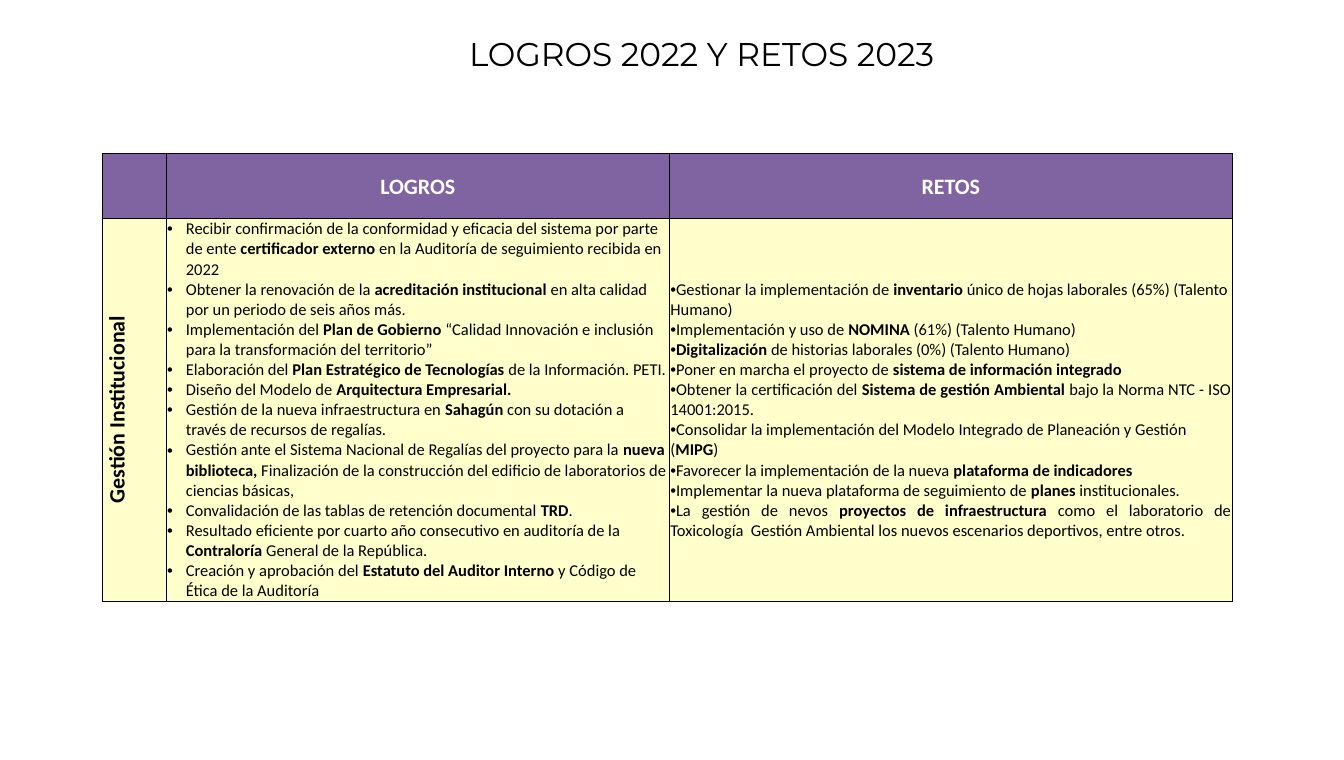
from lxml.etree import SubElement
from pptx import Presentation
from pptx.dml.color import RGBColor
from pptx.enum.text import MSO_ANCHOR as Anchor, MSO_AUTO_SIZE as AutoSize, PP_ALIGN as Align
from pptx.oxml.ns import qn
from pptx.util import Inches, Pt

COLORS = {"header": "8064A2", "body": "FFFFCC", "light": "FFFFFF", "dark": "000000"}

LOGROS = [
    "Recibir confirmación de la conformidad y eficacia del sistema por parte de ente **certificador externo **en la Auditoría de seguimiento recibida en 2022",
    "Obtener la renovación de la **acreditación institucional** en alta calidad por un periodo de seis años más.",
    "Implementación del **Plan de Gobierno** “Calidad Innovación e inclusión para la transformación del territorio”",
    "Elaboración del **Plan Estratégico de Tecnologías** de la Información. PETI.",
    "Diseño del Modelo de **Arquitectura Empresarial.**",
    "Gestión de la nueva infraestructura en **Sahagún** con su dotación a través de recursos de regalías.",
    "Gestión ante el Sistema Nacional de Regalías del proyecto para la **nueva biblioteca,** Finalización de la construcción del edificio de laboratorios de ciencias básicas,",
    "Convalidación de las tablas de retención documental **TRD**.",
    "Resultado eficiente por cuarto año consecutivo en auditoría de la **Contraloría** General de la República.",
    "Creación y aprobación del **Estatuto del Auditor Interno** y Código de Ética de la Auditoría",
]
RETOS = [
    "Gestionar la implementación de **inventario** único de hojas laborales (65%) (Talento Humano)",
    "Implementación y uso de **NOMINA** (61%) (Talento Humano)",
    "**Digitalización** de historias laborales (0%) (Talento Humano)",
    "Poner en marcha el proyecto de **sistema de información integrado**",
    "Obtener la certificación del **Sistema de gestión Ambiental** bajo la Norma NTC - ISO 14001:2015.",
    "Consolidar la implementación del Modelo Integrado de Planeación y Gestión (**MIPG**)",
    "Favorecer la implementación de la nueva **plataforma de indicadores**",
    "Implementar la nueva plataforma de seguimiento de **planes** institucionales.",
    "La gestión de nevos **proyectos de infraestructura** como el laboratorio de Toxicología  Gestión Ambiental los nuevos escenarios deportivos, entre otros.",
]
JUSTIFIED_RETOS = {4, 8}


def add_run(paragraph, text, size, color, bold=False, name="Calibri"):
    run = paragraph.add_run()
    run.text = text
    for attribute, value in {"name": name, "size": Pt(size), "bold": bold}.items():
        setattr(run.font, attribute, value)
    run.font.color.rgb = RGBColor.from_string(COLORS[color])


def add_bullets(cell, items, indent, justified=()):
    """Fill a cell with bulleted items; ** marks the bold stretches."""
    for index, item in enumerate(items):
        frame = cell.text_frame
        paragraph = frame.add_paragraph() if index else frame.paragraphs[0]
        paragraph.alignment = Align.JUSTIFY if index in justified else Align.LEFT
        properties = paragraph._p.get_or_add_pPr()
        properties.set("marL", str(Inches(indent)))
        properties.set("indent", str(Inches(-indent)))
        SubElement(properties, qn("a:buFont"), typeface="Arial")
        SubElement(properties, qn("a:buChar"), char="•")
        for position, text in enumerate(item.split("**")):
            if text:
                add_run(paragraph, text, 12, "dark", bold=position % 2 == 1)


presentation = Presentation()
presentation.slide_width, presentation.slide_height = Inches(13.59), Inches(7.68)
slide = presentation.slides.add_slide(presentation.slide_layouts[6])

# Lengths are percentages of the slide's width and height
across, down = presentation.slide_width / 100, presentation.slide_height / 100
column_widths = [int(share * across) for share in (4.71, 37.45, 41.87)]
row_heights = [int(share * down) for share in (8.46, 49.6)]

table = slide.shapes.add_table(
    2, 3, int(7.65 * across), int(20.25 * down), sum(column_widths), sum(row_heights)
).table
for column, width in zip(table.columns, column_widths):
    column.width = width
for row, height in zip(table.rows, row_heights):
    row.height = height

cell_format = {
    "margin_left": Inches(0.01), "margin_right": Inches(0.01), "margin_top": Inches(0.01),
    "margin_bottom": 0, "vertical_anchor": Anchor.MIDDLE,
}
for row, color in zip(table.rows, ("header", "body")):
    for cell in row.cells:
        for attribute, value in cell_format.items():
            setattr(cell, attribute, value)
        properties = cell._tc.get_or_add_tcPr()
        for side in ("lnL", "lnR", "lnT", "lnB"):
            border = SubElement(properties, qn(f"a:{side}"), w=str(Pt(1)))
            border_fill = SubElement(border, qn("a:solidFill"))
            SubElement(border_fill, qn("a:srgbClr"), val=COLORS["dark"])
        cell.fill.solid()
        cell.fill.fore_color.rgb = RGBColor.from_string(COLORS[color])

headings = [(0, 1, "LOGROS", "light"), (0, 2, "RETOS", "light"), (1, 0, "Gestión Institucional", "dark")]
for row_index, column_index, text, color in headings:
    paragraph = table.cell(row_index, column_index).text_frame.paragraphs[0]
    paragraph.alignment = Align.CENTER
    add_run(paragraph, text, 16, color, bold=True)
table.cell(1, 0)._tc.get_or_add_tcPr().set("vert", "vert270")

add_bullets(table.cell(1, 1), LOGROS, 0.19)
add_bullets(table.cell(1, 2), RETOS, 0, JUSTIFIED_RETOS)

title = slide.shapes.add_textbox(
    int(4.71 * across), int(3.78 * down), int(95 * across), int(6.5 * down)
).text_frame
title.word_wrap = True
title.auto_size = AutoSize.SHAPE_TO_FIT_TEXT
title.paragraphs[0].alignment = Align.CENTER
add_run(title.paragraphs[0], "LOGROS 2022 Y RETOS 2023", 23.9, "dark", name="Montserrat")

presentation.save("out.pptx")
